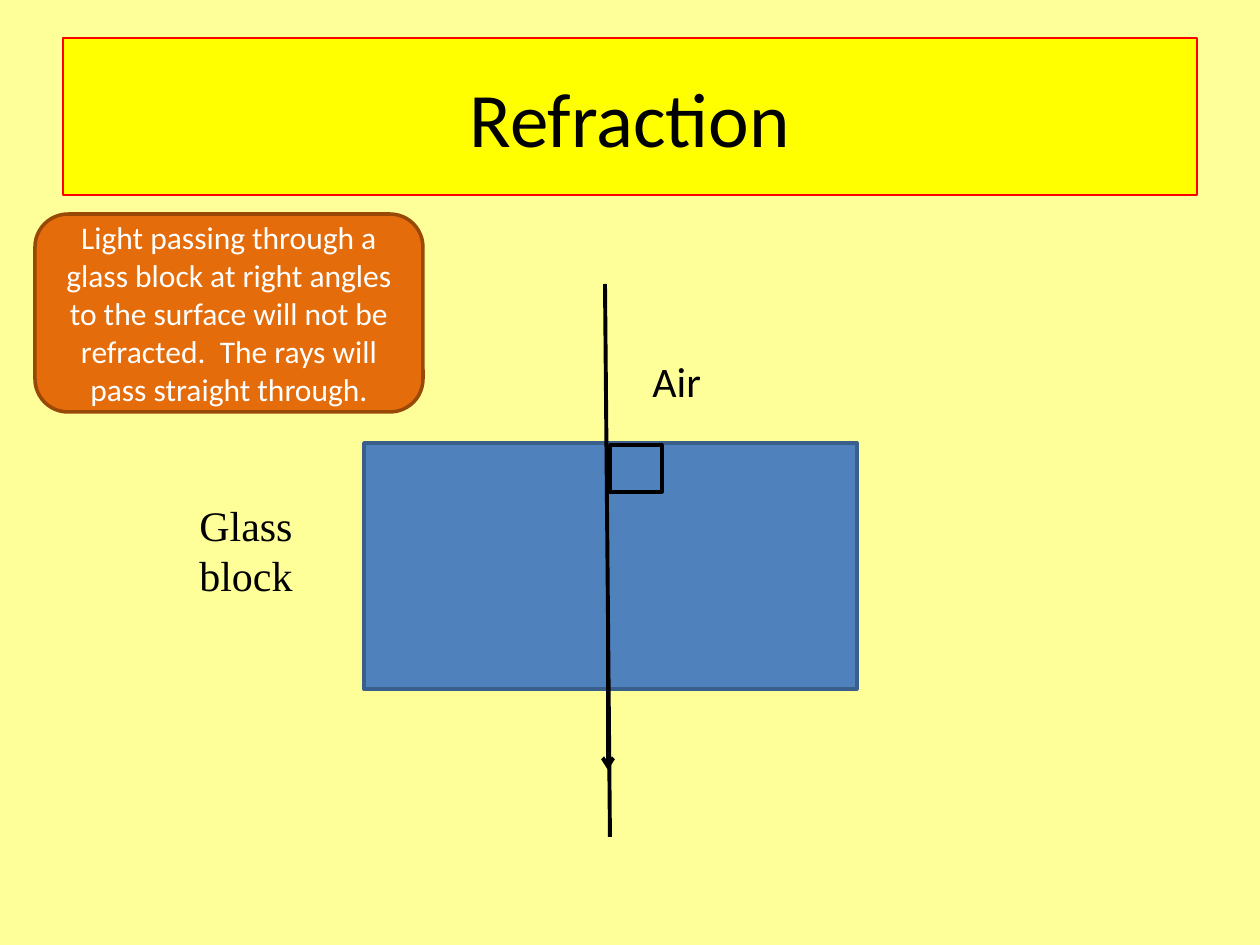
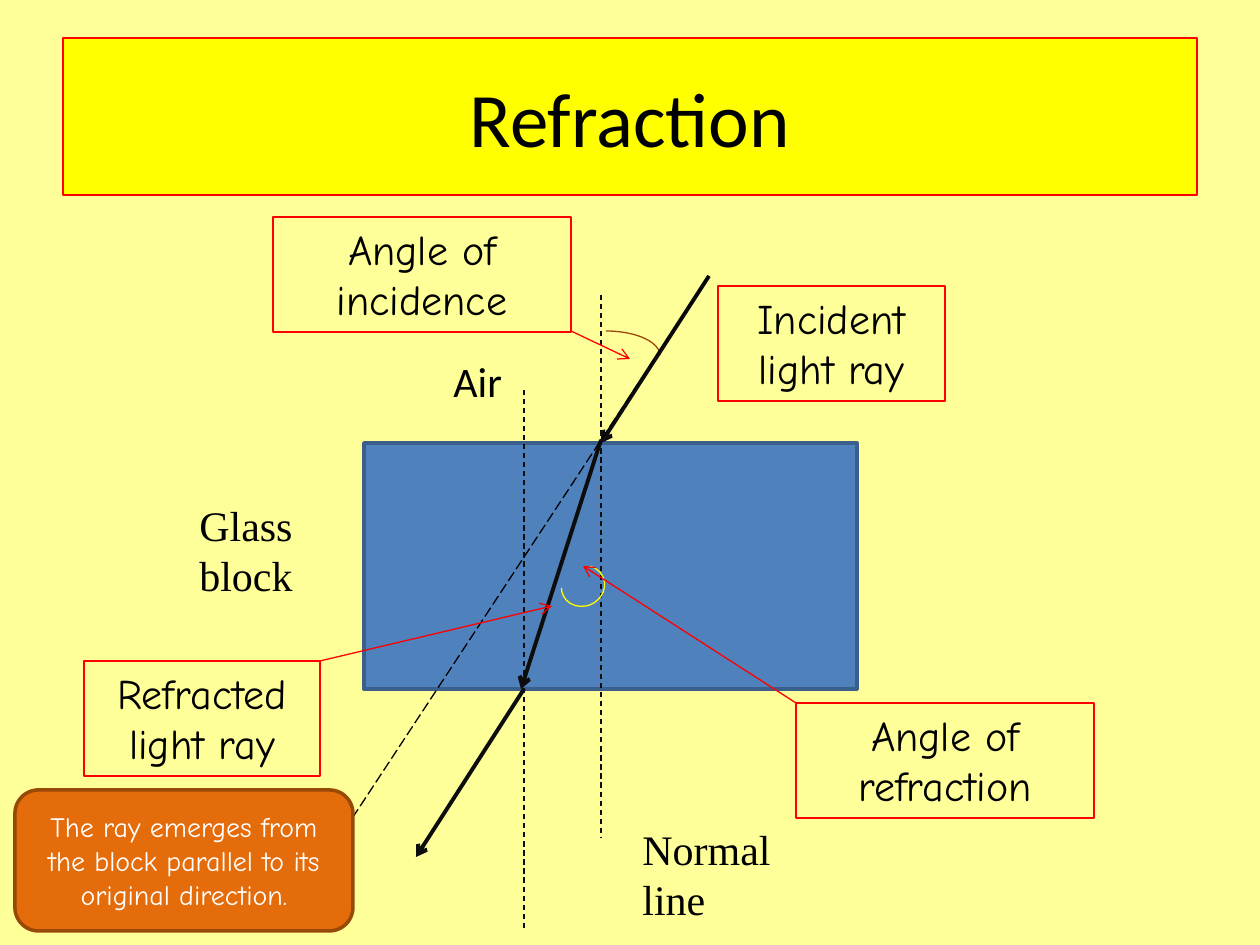
from lxml import etree
from pptx import Presentation
from pptx.dml.color import RGBColor
from pptx.enum import dml, shapes, text
from pptx.oxml.ns import qn
from pptx.util import Emu, Pt

PX = 914400 / 126
WIDTH, HEIGHT = 1260, 945

CREAM = RGBColor(0xFF, 0xFF, 0x99)
YELLOW = RGBColor(0xFF, 0xFF, 0x00)
RED = RGBColor(0xFF, 0x00, 0x00)
BLACK = RGBColor(0x00, 0x00, 0x00)
INK = RGBColor(0x0D, 0x0D, 0x0D)
WHITE = RGBColor(0xFF, 0xFF, 0xFF)
GLASS = RGBColor(0x4F, 0x81, 0xBD)
GLASS_EDGE = RGBColor(0x3A, 0x5F, 0x8C)
ORANGE = RGBColor(0xE4, 0x6C, 0x0A)
BROWN = RGBColor(0x98, 0x48, 0x07)

SANS, SERIF, COMIC = "Calibri", "Times New Roman", "Comic Neue"
THIN, EDGE, RAY = 0.75, 2, 2.25
LEFT, CENTER, RIGHT = text.PP_ALIGN.LEFT, text.PP_ALIGN.CENTER, text.PP_ALIGN.RIGHT
TOP, MIDDLE = text.MSO_ANCHOR.TOP, text.MSO_ANCHOR.MIDDLE
SHAPE, DASH = shapes.MSO_SHAPE, dml.MSO_LINE


def px(*lengths):
    return [Emu(round(n * PX)) for n in lengths]


def write(sp, words, font, size=24, color=BLACK, align=LEFT, anchor=TOP):
    tf = sp.text_frame
    tf.word_wrap = True
    tf.vertical_anchor = anchor
    p = tf.paragraphs[0]
    p.text = words
    p.alignment = align
    p.font.name, p.font.size = font, Pt(size)
    p.font.color.rgb = color


def add_figure(slide, kind, box, line, width=THIN, fill=None):
    sp = slide.shapes.add_shape(kind, *px(*box))
    sp.shadow.inherit = False
    if fill is None:
        sp.fill.background()
    else:
        sp.fill.solid()
        sp.fill.fore_color.rgb = fill
    sp.line.color.rgb = line
    sp.line.width = Pt(width)
    return sp


def add_line(slide, start, end, color, width=THIN, dash=None, arrow=False):
    cxn = slide.shapes.add_connector(shapes.MSO_CONNECTOR.STRAIGHT, *px(*start, *end))
    cxn.line.color.rgb = color
    cxn.line.width = Pt(width)
    if dash is not None:
        cxn.line.dash_style = dash
    if arrow:
        etree.SubElement(cxn.line._get_or_add_ln(), qn("a:tailEnd"), type="arrow")
    etree.SubElement(cxn._element.spPr, qn("a:effectLst"))


def add_text(slide, box, words, font, align=LEFT):
    write(slide.shapes.add_textbox(*px(*box)), words, font, align=align)


def add_label(slide, box, words):
    """Red outlined box naming a part of the diagram."""
    write(add_figure(slide, SHAPE.RECTANGLE, box, RED), words, COMIC, align=CENTER)


def add_note(slide, box, words, font, size):
    """Orange rounded box with an explanation."""
    sp = add_figure(slide, SHAPE.ROUNDED_RECTANGLE, box, BROWN, EDGE, ORANGE)
    write(sp, words, font, size, WHITE, CENTER, MIDDLE)


def add_arc(slide, box, color, angles=(270, 0), rotation=0):
    arc = add_figure(slide, SHAPE.ARC, box, color)
    for i, angle in enumerate(angles):
        arc.adjustments[i] = angle * 0.6  # 60000 units a degree, scaled by 100000
    arc.rotation = rotation


def add_glass_slide(prs, air_left):
    """Slide with the title, the glass block and the names of both media."""
    slide = prs.slides.add_slide(prs.slide_layouts[6])
    title = add_figure(slide, SHAPE.RECTANGLE, (63, 38, 1134, 157), RED, fill=YELLOW)
    write(title, "Refraction", SANS, 44, align=CENTER, anchor=MIDDLE)
    add_figure(slide, SHAPE.RECTANGLE, (364, 443, 493, 246), GLASS_EDGE, EDGE, GLASS)
    add_text(slide, (108, 493, 197, 115), "Glass block", SERIF, RIGHT)
    add_text(slide, (air_left, 349, 117, 63), "Air", SANS)
    return slide


def build_straight_through(prs):
    slide = add_glass_slide(prs, air_left=640)
    add_figure(slide, SHAPE.RECTANGLE, (610, 445, 52, 47), BLACK, EDGE, GLASS)
    add_line(slide, (605, 284), (610, 837), BLACK, RAY)
    add_note(slide, (35, 214, 388, 198),
             "Light passing through a glass block at right angles to the surface "
             "will not be refracted.  The rays will pass straight through.", SANS, 18)
    add_line(slide, (608, 605), (608, 770), BLACK, RAY, arrow=True)


def build_refracted(prs):
    slide = add_glass_slide(prs, air_left=441)
    add_text(slide, (630, 817, 207, 115), "Normal line", SERIF)

    source, entry, leaving = (709, 276), (601, 443), (524, 689)
    add_arc(slide, (552, 331, 108, 49), BROWN)
    for x, top, bottom in ((601, 295, 837), (524, 390, 931)):
        add_line(slide, (x, top), (x, bottom), INK, dash=DASH.DASH)
    for start, end in ((source, entry), ((601, 440), (521, 689)), (leaving, (416, 857))):
        add_line(slide, start, end, INK, RAY, arrow=True)
    add_arc(slide, (561, 566, 44, 40), YELLOW, (135.3, 20.74), 154.3)
    add_line(slide, source, (353, 817), BLACK, dash=DASH.LONG_DASH)

    for box, words in (
        ((718, 286, 227, 115), "Incident light ray"),
        ((273, 217, 298, 115), "Angle of incidence"),
        ((796, 703, 298, 115), "Angle of refraction"),
        ((84, 661, 236, 115), "Refracted light ray"),
    ):
        add_label(slide, box, words)
    for corner, target in (
        ((571, 331), (630, 359)),
        ((796, 703), (583, 566)),
        ((320, 661), (552, 606)),
    ):
        add_line(slide, corner, target, RED, arrow=True)

    add_note(slide, (15, 790, 338, 141),
             "The ray emerges from the block parallel to its original direction.",
             COMIC, 16)


def main():
    prs = Presentation()
    prs.slide_width, prs.slide_height = px(WIDTH, HEIGHT)
    background = prs.slide_master.background.fill
    background.solid()
    background.fore_color.rgb = CREAM
    build_straight_through(prs)
    build_refracted(prs)
    prs.save("out.pptx")


if __name__ == "__main__":
    main()
